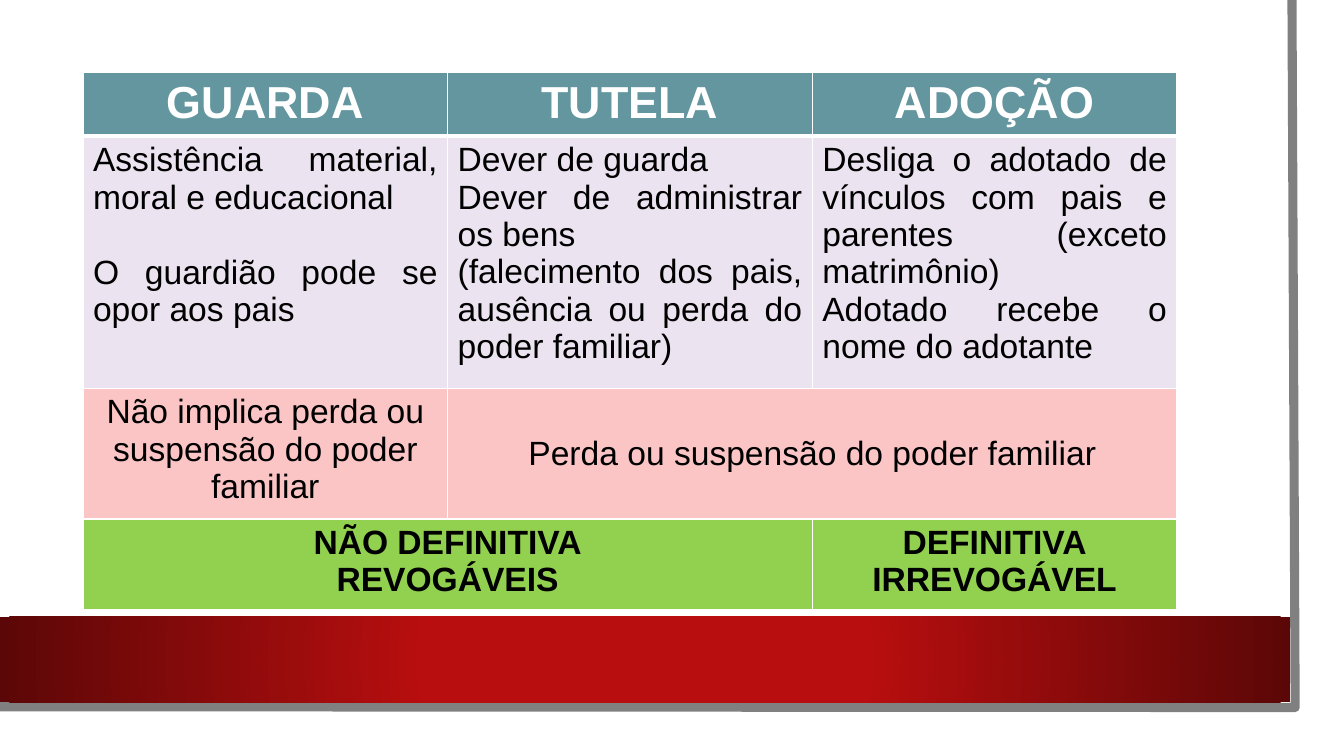
from dataclasses import dataclass

from lxml.etree import SubElement
from pptx import Presentation
from pptx.dml.color import RGBColor
from pptx.enum.shapes import MSO_SHAPE
from pptx.enum.text import MSO_ANCHOR, PP_ALIGN
from pptx.oxml import parse_xml
from pptx.oxml.ns import nsdecls, qn
from pptx.util import Cm, Pt


@dataclass(frozen=True)
class Theme:
    font: str = "Arial"
    heading_size: int = 32
    body_size: int = 24
    white: str = "FFFFFF"
    black: str = "000000"
    edge: str = "808080"
    band_center: str = "B80E0F"
    band_rim: str = "5C0707"
    heading: str = "64969F"
    duties: str = "EBE3F0"
    family_power: str = "FBC5C5"
    permanence: str = "92D050"


THEME = Theme()
COLUMN_WIDTH = 9.19
ROW_HEIGHTS = (1.6, 6.35, 3.3, 2.29)

HEADINGS = ("GUARDA", "TUTELA", "ADOÇÃO")
DUTIES = (
    ("Assistência material, moral e educacional",
     "O guardião pode se opor aos pais"),
    ("Dever de guarda", "Dever de administrar os bens",
     "(falecimento dos pais, ausência ou perda do poder familiar)"),
    ("Desliga o adotado de vínculos com pais e parentes (exceto matrimônio)",
     "Adotado recebe o nome do adotante"),
)


def color(code):
    return RGBColor.from_string(code)


def add_page_edge(slide):
    builder = slide.shapes.build_freeform(Cm(32.56), 0)
    corners = [(Cm(32.64), Cm(17.83)), (Cm(-0.08), Cm(17.81))]
    builder.add_line_segments(corners, close=False)
    edge = builder.convert_to_shape()
    edge.shadow.inherit = False
    edge.fill.background()
    edge.line.color.rgb = color(THEME.edge)
    edge.line.width = Pt(6.5)


def add_band(slide):
    band = slide.shapes.add_shape(
        MSO_SHAPE.RECTANGLE, 0, Cm(15.54), Cm(32.51), Cm(2.16))
    band.shadow.inherit = False
    band.line.fill.background()
    band.fill.gradient()
    stops = ((0.34, THEME.band_center), (1, THEME.band_rim))
    for stop, (position, code) in zip(band.fill.gradient_stops, stops):
        stop.position = position
        stop.color.rgb = color(code)
    linear = next(band.element.iter(qn("a:lin")))
    linear.getparent().replace(linear, parse_xml(
        f'<a:path {nsdecls("a")} path="circle">'
        '<a:fillToRect l="50000" t="50000" r="50000" b="50000"/></a:path>'))


def add_borders(cell, bottom):
    properties = cell._tc.get_or_add_tcPr()
    for side, width in (("L", 1), ("R", 1), ("T", 1), ("B", bottom)):
        border = SubElement(properties, qn(f"a:ln{side}"), w=str(Pt(width)))
        fill = SubElement(border, qn("a:solidFill"))
        SubElement(fill, qn("a:srgbClr"), val=THEME.white)


def fill_cell(cell, lines, align, size=THEME.body_size,
              ink=THEME.black, bold=False):
    cell.text_frame.text = "\n".join(lines)
    for paragraph in cell.text_frame.paragraphs:
        paragraph.alignment = align
        font = paragraph.runs[0].font
        font.name = THEME.font
        font.size = Pt(size)
        font.bold = bold
        font.color.rgb = color(ink)


def add_comparison(slide):
    comparison = slide.shapes.add_table(
        len(ROW_HEIGHTS), len(HEADINGS), Cm(2.09), Cm(1.83),
        Cm(COLUMN_WIDTH * len(HEADINGS)), Cm(sum(ROW_HEIGHTS))).table
    comparison.first_row = comparison.horz_banding = False
    for column in comparison.columns:
        column.width = Cm(COLUMN_WIDTH)

    row_fills = (THEME.heading, THEME.duties,
                 THEME.family_power, THEME.permanence)
    for index, (height, code) in enumerate(zip(ROW_HEIGHTS, row_fills)):
        row = comparison.rows[index]
        row.height = Cm(height)
        for cell in row.cells:
            add_borders(cell, bottom=1 if index else 3)
            cell.fill.solid()
            cell.fill.fore_color.rgb = color(code)

    for column, (heading, duties) in enumerate(zip(HEADINGS, DUTIES)):
        fill_cell(comparison.cell(0, column), [heading], PP_ALIGN.CENTER,
                  THEME.heading_size, THEME.white, True)
        fill_cell(comparison.cell(1, column), duties, PP_ALIGN.JUSTIFY)
    guardian = comparison.cell(1, 0).text_frame.paragraphs[1]
    guardian.space_before = Pt(27)

    kept_power = comparison.cell(2, 0)
    fill_cell(kept_power, ["Não implica perda ou suspensão do poder familiar"],
              PP_ALIGN.CENTER)
    lost_power = comparison.cell(2, 1)
    lost_power.merge(comparison.cell(2, 2))
    lost_power.vertical_anchor = MSO_ANCHOR.MIDDLE
    fill_cell(lost_power, ["Perda ou suspensão do poder familiar"],
              PP_ALIGN.CENTER)

    revocable = comparison.cell(3, 0)
    revocable.merge(comparison.cell(3, 1))
    fill_cell(revocable, ["NÃO DEFINITIVA", "REVOGÁVEIS"],
              PP_ALIGN.CENTER, bold=True)
    fill_cell(comparison.cell(3, 2), ["DEFINITIVA", "IRREVOGÁVEL"],
              PP_ALIGN.CENTER, bold=True)


def main():
    presentation = Presentation()
    presentation.slide_width = Cm(33.87)
    presentation.slide_height = Cm(19.05)
    slide = presentation.slides.add_slide(presentation.slide_layouts[6])
    add_page_edge(slide)
    add_band(slide)
    add_comparison(slide)
    presentation.save("out.pptx")


if __name__ == "__main__":
    main()
